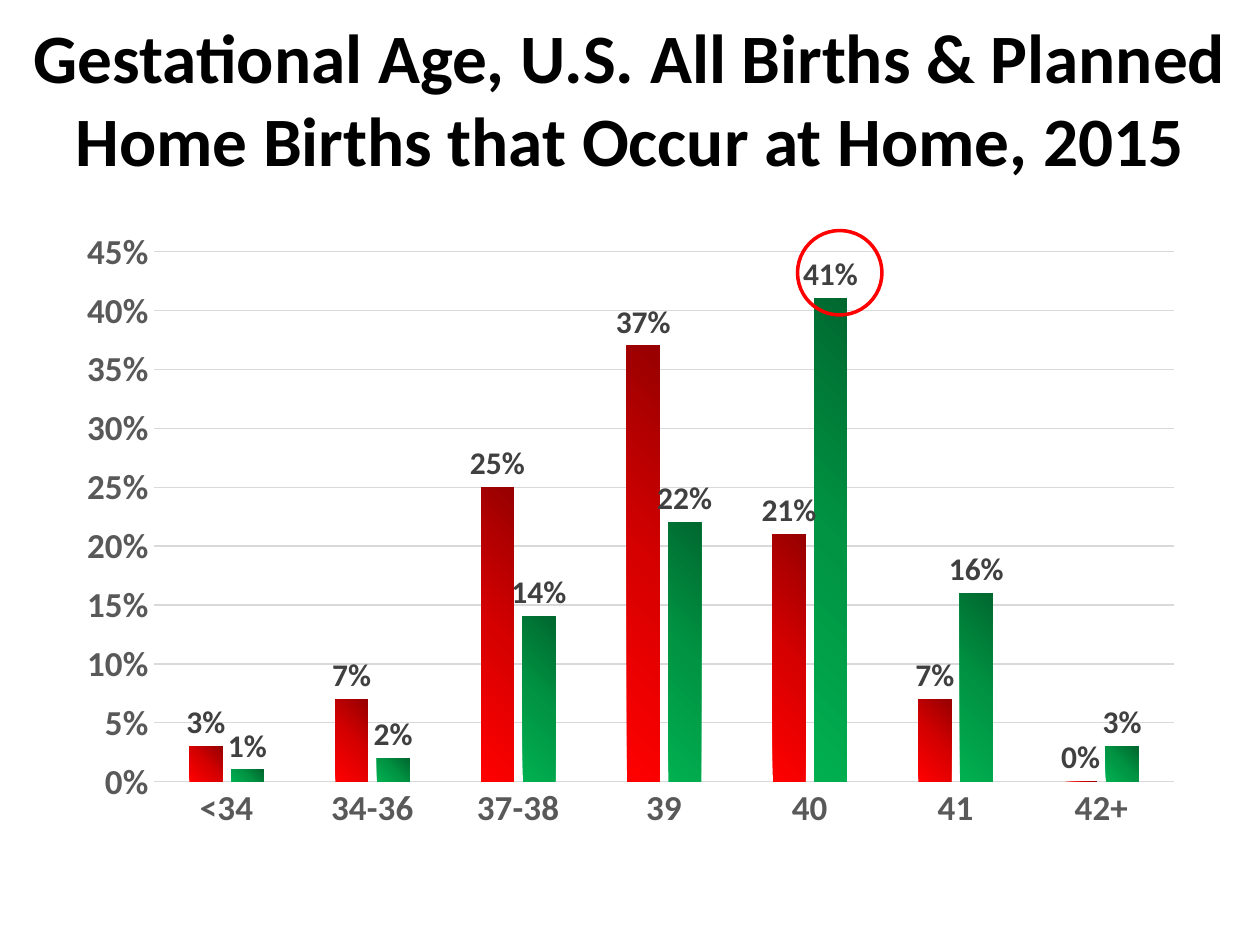
"""Build a slide comparing gestational age for all births and planned home births."""
from pptx import Presentation
from pptx.chart.data import CategoryChartData
from pptx.dml.color import RGBColor
from pptx.enum.chart import XL_CHART_TYPE, XL_LABEL_POSITION, XL_TICK_MARK
from pptx.enum.shapes import MSO_SHAPE
from pptx.enum.text import MSO_ANCHOR, MSO_AUTO_SIZE, PP_ALIGN
from pptx.oxml import parse_xml
from pptx.oxml.ns import nsdecls
from pptx.util import Pt

COLUMNS = XL_CHART_TYPE.COLUMN_CLUSTERED
OUTSIDE_END = XL_LABEL_POSITION.OUTSIDE_END
NO_TICK = XL_TICK_MARK.NONE
OVAL = MSO_SHAPE.OVAL
MIDDLE = MSO_ANCHOR.MIDDLE
NO_AUTOFIT = MSO_AUTO_SIZE.NONE
CENTER = PP_ALIGN.CENTER
TITLE_ONLY = 5

TITLE = "Gestational Age, U.S. All Births & Planned Home Births that Occur at Home, 2015"
WEEKS = ["<34", "34-36", "37-38", "39", "40", "41", "42+"]
SERIES = [
    ("Series 1", [0.03, 0.07, 0.25, 0.37, 0.21, 0.07, 0], ["970000", "D70000", "FF0000"]),
    ("Series 2", [0.01, 0.02, 0.14, 0.22, 0.41, 0.16, 0.03], ["00682F", "009443", "00B050"]),
]


def rgb(value):
    return RGBColor.from_string(value)


def format_font(font, size, color, bold=True, name="Calibri"):
    font.name, font.size, font.bold = name, Pt(size), bold
    font.color.rgb = rgb(color)


def write_text(text_frame, text, size=18, color="000000", bold=True, align=CENTER):
    paragraph = text_frame.paragraphs[0]
    paragraph.alignment = align
    run = paragraph.add_run()
    run.text = text
    format_font(run.font, size, color, bold)


def gradient_fill(colors):
    step = 100000 // (len(colors) - 1)
    stops = "".join(
        f'<a:gs pos="{index * step}"><a:srgbClr val="{color}"/></a:gs>'
        for index, color in enumerate(colors)
    )
    return parse_xml(
        f'<a:gradFill {nsdecls("a")} rotWithShape="1"><a:gsLst>{stops}</a:gsLst>'
        '<a:path path="circle"><a:fillToRect l="100000" b="100000"/></a:path>'
        '<a:tileRect t="-100000" r="-100000"/></a:gradFill>'
    )


def plot_layout(left, top, width, height):
    parts = "".join(
        f'<c:{tag} val="{value}"/>'
        for tag, value in [
            ("layoutTarget", "inner"), ("xMode", "edge"), ("yMode", "edge"),
            ("x", left), ("y", top), ("w", width), ("h", height),
        ]
    )
    return parse_xml(
        f'<c:layout {nsdecls("c")}><c:manualLayout>{parts}</c:manualLayout></c:layout>'
    )


class SlideBuilder:
    """Hold the style and the current slide."""

    axis_color = "595959"
    label_color = "404040"
    grid_color = "D9D9D9"

    def __init__(self, presentation):
        self.slide = presentation.slides.add_slide(presentation.slide_layouts[TITLE_ONLY])

    def title(self, text, left, top, width, height):
        shape = self.slide.shapes.title
        shape.left, shape.top = Pt(left), Pt(top)
        shape.width, shape.height = Pt(width), Pt(height)
        frame = shape.text_frame
        frame.word_wrap, frame.auto_size = True, NO_AUTOFIT
        frame.vertical_anchor = MIDDLE
        write_text(frame, text, size=39.6)

    def column_chart(self, categories, series_list, left, top, width, height):
        data = CategoryChartData(number_format="0%")
        data.categories = categories
        for name, values, _ in series_list:
            data.add_series(name, values)
        frame = self.slide.shapes.add_chart(
            COLUMNS, Pt(left), Pt(top), Pt(width), Pt(height), data
        )
        chart = frame.chart
        chart.has_legend = chart.has_title = False
        format_font(chart.font, 10, "000000", bold=False)
        plot = chart.plots[0]
        plot.gap_width, plot.overlap, plot.vary_by_categories = 219, -27, False
        for series, (_, _, colors) in zip(plot.series, series_list):
            self.style_series(series, colors)
        self.style_axes(chart)
        plot_area = chart._chartSpace.chart.plotArea
        for layout in plot_area.findall("{*}layout"):
            plot_area.remove(layout)
        plot_area.insert(0, plot_layout(0.08, 0.05, 0.9, 0.85))

    def style_series(self, series, colors):
        series.invert_if_negative = False
        series.format.line.fill.background()
        series.format.fill.background()
        properties = series._element.spPr
        properties.replace(properties.find("{*}noFill"), gradient_fill(colors))
        labels = series.data_labels
        labels.show_value, labels.position = True, OUTSIDE_END
        labels.number_format, labels.number_format_is_linked = "0%", False
        format_font(labels.font, 18, self.label_color)

    def style_axes(self, chart):
        for axis in (chart.category_axis, chart.value_axis):
            axis.major_tick_mark = axis.minor_tick_mark = NO_TICK
            format_font(axis.tick_labels.font, 20, self.axis_color)
        self.style_line(chart.category_axis.format.line, self.grid_color, 0.75)
        axis = chart.value_axis
        axis.minimum_scale, axis.maximum_scale, axis.major_unit = 0, 0.45, 0.05
        axis.format.line.fill.background()
        axis.tick_labels.number_format = "0%"
        axis.tick_labels.number_format_is_linked = False
        self.style_line(axis.major_gridlines.format.line, self.grid_color, 0.75)

    def style_line(self, line, color, width):
        line.color.rgb, line.width = rgb(color), Pt(width)

    def ring(self, left, top, diameter, color="FF0000", width=2):
        shape = self.slide.shapes.add_shape(
            OVAL, Pt(left), Pt(top), Pt(diameter), Pt(diameter)
        )
        shape.shadow.inherit = False
        shape.fill.background()
        self.style_line(shape.line, color, width)


def main():
    presentation = Presentation()
    presentation.slide_width, presentation.slide_height = Pt(720), Pt(540)
    builder = SlideBuilder(presentation)
    builder.title(TITLE, 0, 0, 720, 111.6)
    builder.column_chart(WEEKS, SERIES, 36, 126, 648, 356.4)
    builder.ring(455.76, 131.76, 48.24)
    presentation.save("out.pptx")


if __name__ == "__main__":
    main()
